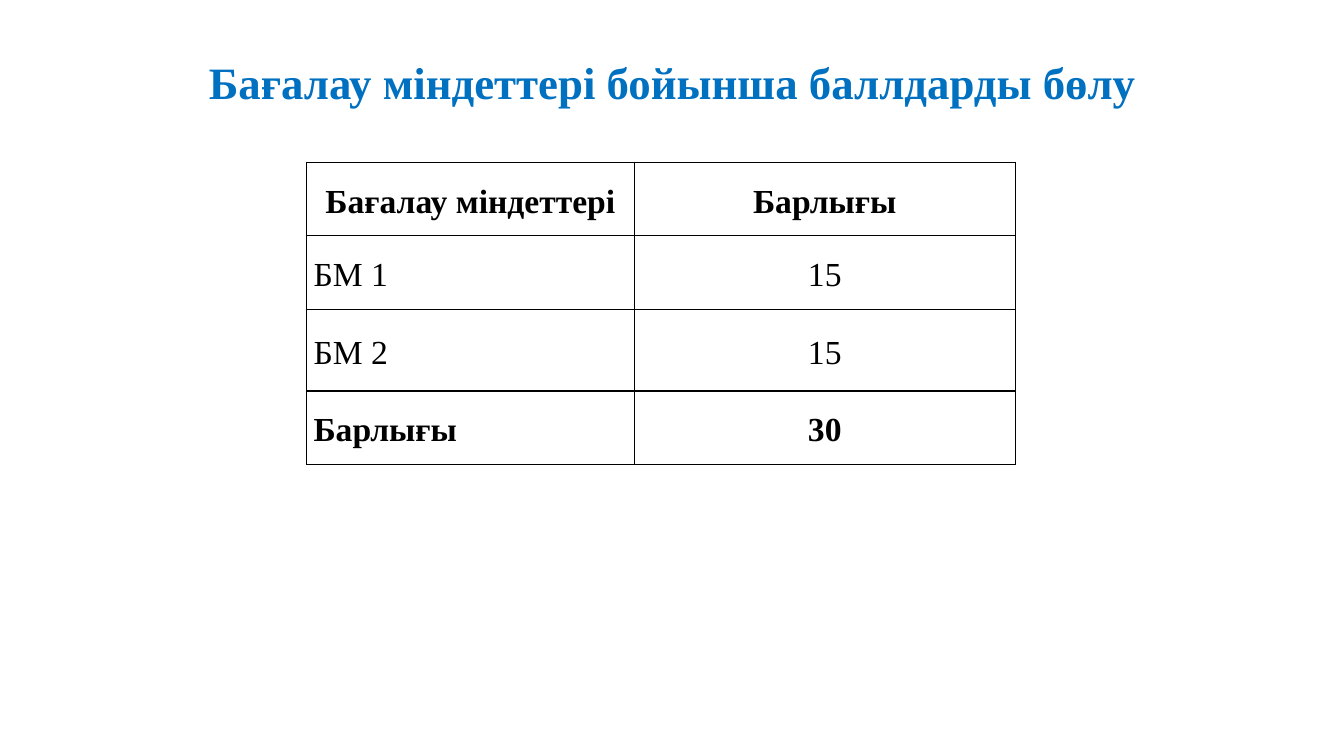
from dataclasses import dataclass

from lxml.etree import SubElement
from pptx import Presentation
from pptx.dml.color import RGBColor
from pptx.enum.text import MSO_ANCHOR, PP_ALIGN
from pptx.oxml.ns import qn
from pptx.util import Inches, Pt

TITLE = "Бағалау міндеттері бойынша баллдарды бөлу"
SCORES = [
    ("Бағалау міндеттері", "Барлығы"),
    ("БМ 1", "15"),
    ("БМ 2", "15"),
    ("Барлығы", "30"),
]
COLUMN_WIDTHS = [3.25, 3.78]
ROW_HEIGHTS = [0.73, 0.73, 0.81, 0.73]


@dataclass(frozen=True)
class Theme:
    font: str = "Times New Roman"
    title_color: str = "0070C0"
    text_color: str = "000000"
    border_color: str = "000000"
    title_size: int = 32
    table_size: int = 24
    border_width: int = 1


THEME = Theme()


def format_paragraph(paragraph, size, color, bold, align, spacing):
    paragraph.alignment = align
    paragraph.line_spacing = spacing
    font = paragraph.font
    font.name = THEME.font
    font.size = Pt(size)
    font.bold = bold
    font.color.rgb = RGBColor.from_string(color)


def add_borders(cell):
    properties = cell._tc.get_or_add_tcPr()
    for side in ("a:lnL", "a:lnR", "a:lnT", "a:lnB"):
        line = SubElement(properties, qn(side), w=str(Pt(THEME.border_width)))
        fill = SubElement(line, qn("a:solidFill"))
        SubElement(fill, qn("a:srgbClr"), val=THEME.border_color)


def add_title(slide):
    title = slide.shapes.title
    title.left, title.top = Inches(0.92), Inches(0.12)
    title.width, title.height = Inches(11.5), Inches(1.45)
    title.text_frame.text = TITLE
    title.text_frame.vertical_anchor = MSO_ANCHOR.MIDDLE
    format_paragraph(title.text_frame.paragraphs[0], THEME.title_size,
                     THEME.title_color, True, PP_ALIGN.CENTER, 0.9)


def add_score_table(slide):
    table = slide.shapes.add_table(
        len(SCORES), len(COLUMN_WIDTHS), Inches(3.04), Inches(1.61),
        Inches(sum(COLUMN_WIDTHS)), Inches(sum(ROW_HEIGHTS))).table
    table.first_row = table.horz_banding = False
    for column, width in zip(table.columns, COLUMN_WIDTHS):
        column.width = Inches(width)
    for row, height in zip(table.rows, ROW_HEIGHTS):
        row.height = Inches(height)

    last_row = len(SCORES) - 1
    for r, scores in enumerate(SCORES):
        for c, score in enumerate(scores):
            cell = table.cell(r, c)
            cell.text = score
            cell.vertical_anchor = MSO_ANCHOR.MIDDLE
            cell.margin_left = cell.margin_right = Inches(0.07)
            cell.margin_top = cell.margin_bottom = 0
            add_borders(cell)
            cell.fill.background()
            is_label = r > 0 and c == 0
            format_paragraph(cell.text_frame.paragraphs[0], THEME.table_size,
                             THEME.text_color, r in (0, last_row),
                             PP_ALIGN.LEFT if is_label else PP_ALIGN.CENTER, 1.15)


def main():
    presentation = Presentation()
    presentation.slide_width = Inches(13.33)
    presentation.slide_height = Inches(7.5)
    slide = presentation.slides.add_slide(presentation.slide_layouts[5])
    add_title(slide)
    add_score_table(slide)
    presentation.save("out.pptx")


if __name__ == "__main__":
    main()
